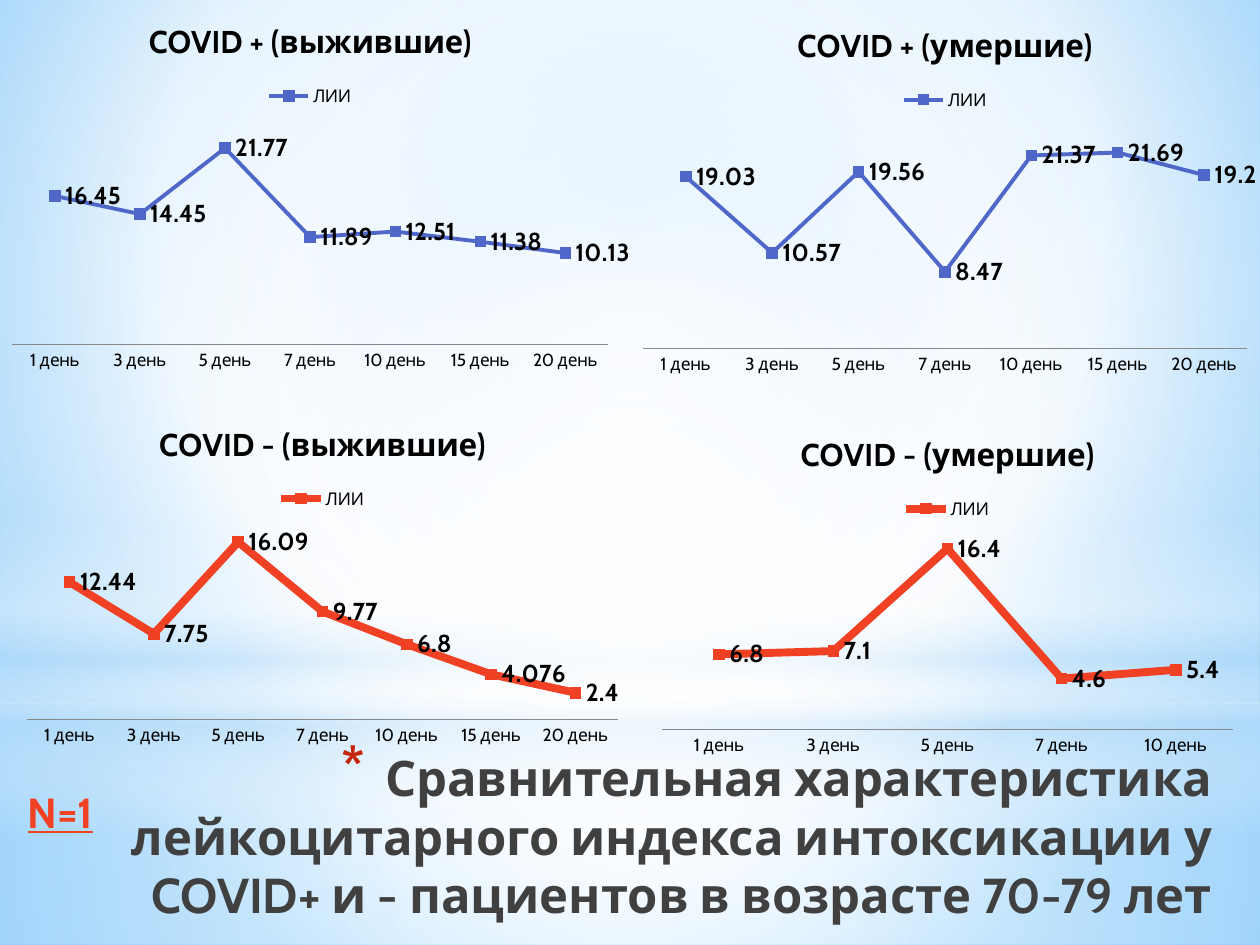
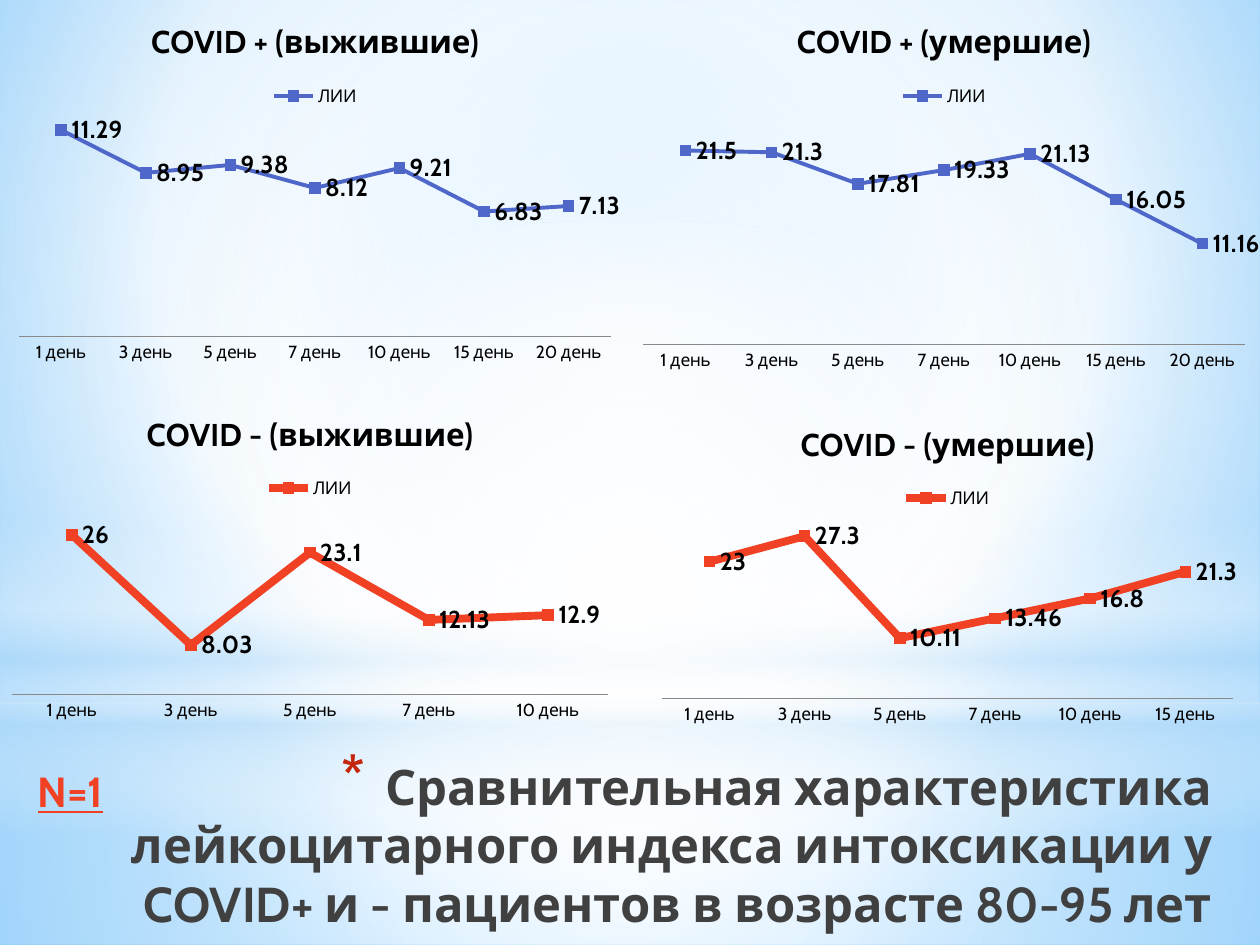
from dataclasses import dataclass

from pptx import Presentation
from pptx.chart.data import CategoryChartData
from pptx.dml.color import RGBColor
from pptx.enum.chart import (XL_CHART_TYPE, XL_LABEL_POSITION, XL_LEGEND_POSITION,
                             XL_MARKER_STYLE, XL_TICK_MARK)
from pptx.enum.shapes import MSO_SHAPE
from pptx.enum.text import MSO_ANCHOR, MSO_AUTO_SIZE, PP_ALIGN
from pptx.oxml import parse_xml
from pptx.oxml.ns import nsdecls, qn
from pptx.util import Inches, Pt


@dataclass(frozen=True)
class Theme:
    font: str = "Cabin"
    title_color: str = "404040"
    bullet_color: str = "C3260C"
    covid_positive: str = "4E67C8"
    covid_negative: str = "F14124"
    chart_text: str = "000000"
    axis: str = "898989"
    white: str = "FFFFFF"
    pale_blue: str = "B4DCFA"
    sky_light: str = "9ED5FF"
    sky_deep: str = "5BB9FF"
    title_size: int = 28
    note_size: int = 24
    chart_title_size: int = 18
    label_size: int = 14
    chart_size: int = 10


THEME = Theme()
DAYS = ["1 день", "3 день", "5 день", "7 день", "10 день", "15 день", "20 день"]
CENTER = (50, 50, 50, 50)
TITLE = ("Сравнительная характеристика лейкоцитарного индекса интоксикации "
         "у COVID+ и - пациентов в возрасте {} лет")

# Each chart: sign, outcome, box, values, optional inner plot area.
SLIDES = [
    dict(age="70-79", title_box=(0.43, 5.88, 9.29, 1.34), note_box=(0.12, 6.19, 1.42, 0.5),
         charts=[
             ("-", "выжившие", (0.12, 3.2, 4.88, 2.77),
              [12.44, 7.75, 16.09, 9.77, 6.8, 4.076, 2.4], None),
             ("-", "умершие", (5.16, 3.28, 4.72, 2.77), [6.8, 7.1, 16.4, 4.6, 5.4], None),
             ("+", "выжившие", (0, 0, 5, 3),
              [16.45, 14.45, 21.77, 11.89, 12.51, 11.38, 10.13], None),
             ("+", "умершие", (5, 0.03, 5, 3),
              [19.03, 10.57, 19.56, 8.47, 21.37, 21.69, 19.2], None),
         ]),
    dict(age="80-95", title_box=(0.35, 5.95, 9.37, 1.26), note_box=(0.2, 6.03, 1.57, 0.5),
         charts=[
             ("+", "выжившие", (0, 0, 5, 3),
              [11.29, 8.95, 9.38, 8.12, 9.21, 6.83, 7.13], (0.03, 0.31, 0.94, 0.58)),
             ("+", "умершие", (5, 0, 5, 3),
              [21.5, 21.3, 17.81, 19.33, 21.13, 16.05, 11.16], None),
             ("-", "выжившие", (0, 3.12, 4.92, 2.65), [26, 8.03, 23.1, 12.13, 12.9], None),
             ("-", "умершие", (5.16, 3.2, 4.72, 2.6),
              [23, 27.3, 10.11, 13.46, 16.8, 21.3], None),
         ]),
]


def color(value):
    return RGBColor.from_string(value)


def inches(box):
    return [Inches(length) for length in box]


def set_gradient(fill, element, stops, focus=None, angle=90):
    """Fill with (position, colour, opacity) stops: circular to focus, else linear."""
    fill.solid()
    solid = next(element.iter(qn("a:solidFill")))
    stop_xml = "".join(
        f'<a:gs pos="{position * 1000}"><a:srgbClr val="{value}">'
        f'<a:alpha val="{opacity * 1000}"/></a:srgbClr></a:gs>'
        for position, value, opacity in stops)
    if focus:
        left, top, right, bottom = (percent * 1000 for percent in focus)
        direction = (f'<a:path path="circle"><a:fillToRect l="{left}" t="{top}" '
                     f'r="{right}" b="{bottom}"/></a:path>')
    else:
        direction = f'<a:lin ang="{angle * 60000}" scaled="0"/>'
    gradient = parse_xml(f'<a:gradFill {nsdecls("a")} rotWithShape="1">'
                         f'<a:gsLst>{stop_xml}</a:gsLst>{direction}</a:gradFill>')
    solid.getparent().replace(solid, gradient)


def add_master_glow(master, slide, position, preset, box, stops, focus=None):
    """Draw a borderless gradient shape and place it behind the master's placeholders."""
    shape = slide.shapes.add_shape(preset, *inches(box))
    shape.shadow.inherit = False
    set_gradient(shape.fill, shape.element, stops, focus)
    shape.line.fill.background()
    master.shapes.element.insert(2 + position, shape.element)


def style_master(master, slide):
    white, blue = THEME.white, THEME.pale_blue
    set_gradient(master.background.fill, master.element,
                 [(0, THEME.sky_light, 100), (60, white, 100), (100, THEME.sky_deep, 100)],
                 (20, 10, 20, 60))
    glows = [
        (MSO_SHAPE.RECTANGLE, (0, 5.58, 10, 1.92),
         [(0, white, 91), (37, white, 76), (100, blue, 79)], CENTER),
        (MSO_SHAPE.RECTANGLE, (0, 0, 10, 5.58),
         [(0, white, 89), (48, white, 62), (100, blue, 79)], CENTER),
        (MSO_SHAPE.RECTANGLE, (0, 4.12, 10, 2.5),
         [(0, white, 0), (29, white, 30), (45, blue, 40),
          (55, white, 26), (65, blue, 60), (100, white, 0)], None),
        (MSO_SHAPE.OVAL, (0, 1.75, 10, 5.58), [(0, white, 100), (56, white, 0)], CENTER),
    ]
    for position, glow in enumerate(glows):
        add_master_glow(master, slide, position, *glow)


def set_font(font, size, value, bold=False, underline=None):
    font.name = THEME.font
    font.size = Pt(size)
    font.bold = bold
    font.underline = underline
    font.color.rgb = color(value)


def write_text(text_frame, text, align=PP_ALIGN.LEFT, auto_size=MSO_AUTO_SIZE.NONE, **font_format):
    text_frame.word_wrap = True
    text_frame.auto_size = auto_size
    text_frame.vertical_anchor = MSO_ANCHOR.TOP
    paragraph = text_frame.paragraphs[0]
    paragraph.alignment = align
    run = paragraph.add_run()
    run.text = text
    set_font(run.font, **font_format)
    return paragraph


def add_star_bullet(paragraph):
    properties = paragraph._p.get_or_add_pPr()
    properties.set("marL", str(Inches(0.35)))
    properties.set("indent", str(Inches(-0.35)))
    for xml in (f'<a:buClr {nsdecls("a")}><a:srgbClr val="{THEME.bullet_color}"/></a:buClr>',
                f'<a:buSzPct {nsdecls("a")} val="128000"/>',
                f'<a:buChar {nsdecls("a")} char="*"/>'):
        properties.append(parse_xml(xml))


def set_title(slide, text, box):
    title = slide.shapes.title
    title.left, title.top, title.width, title.height = inches(box)
    paragraph = write_text(title.text_frame, text, align=PP_ALIGN.RIGHT,
                           size=THEME.title_size, value=THEME.title_color, bold=True)
    add_star_bullet(paragraph)


def add_note(slide, text, box):
    note = slide.shapes.add_textbox(*inches(box))
    write_text(note.text_frame, text, auto_size=MSO_AUTO_SIZE.SHAPE_TO_FIT_TEXT,
               size=THEME.note_size, value=THEME.covid_negative, bold=True, underline=True)


def set_plot_area(chart, area):
    """Fix the inner plot area, given as fractions of the chart."""
    plot_area = next(chart.element.iter(qn("c:plotArea")))
    for layout in plot_area.findall(qn("c:layout")):
        plot_area.remove(layout)
    sizes = "".join(f'<c:{name} val="{value}"/>' for name, value in zip("xywh", area))
    plot_area.insert(0, parse_xml(
        f'<c:layout {nsdecls("c")}><c:manualLayout><c:layoutTarget val="inner"/>'
        f'<c:xMode val="edge"/><c:yMode val="edge"/>{sizes}</c:manualLayout></c:layout>'))


def style_series(series, value, line_width):
    series.smooth = False
    series.format.line.color.rgb = color(value)
    series.format.line.width = Pt(line_width)
    marker = series.marker
    marker.style = XL_MARKER_STYLE.SQUARE
    marker.size = 6
    marker.format.fill.solid()
    marker.format.fill.fore_color.rgb = color(value)
    marker.format.line.color.rgb = color(value)
    labels = series.data_labels
    labels.show_value = True
    labels.position = XL_LABEL_POSITION.RIGHT
    set_font(labels.font, THEME.label_size, THEME.chart_text, bold=True)


def add_index_chart(slide, sign, outcome, box, values, plot_area):
    data = CategoryChartData()
    data.categories = DAYS[:len(values)]
    data.add_series("ЛИИ", values)
    chart = slide.shapes.add_chart(XL_CHART_TYPE.LINE_MARKERS, *inches(box), data).chart
    set_font(chart.font, THEME.chart_size, THEME.chart_text)

    title_run = chart.chart_title.text_frame.paragraphs[0].add_run()
    title_run.text = f"COVID {sign} ({outcome})"
    set_font(title_run.font, THEME.chart_title_size, THEME.chart_text, bold=True)
    chart.chart_title.include_in_layout = False

    chart.has_legend = True
    chart.legend.position = XL_LEGEND_POSITION.TOP
    chart.legend.include_in_layout = False

    chart.value_axis.visible = False
    chart.value_axis.has_major_gridlines = False
    chart.value_axis.minimum_scale = 0
    chart.category_axis.major_tick_mark = XL_TICK_MARK.NONE
    chart.category_axis.format.line.color.rgb = color(THEME.axis)

    plot = chart.plots[0]
    plot.vary_by_categories = False
    if sign == "+":
        style_series(plot.series[0], THEME.covid_positive, 2.25)
    else:
        style_series(plot.series[0], THEME.covid_negative, 4.5)
    if plot_area:
        set_plot_area(chart, plot_area)


def main():
    presentation = Presentation()
    presentation.slide_width = Inches(10)
    presentation.slide_height = Inches(7.5)
    title_only = presentation.slide_layouts[5]
    for number, content in enumerate(SLIDES):
        slide = presentation.slides.add_slide(title_only)
        if number == 0:
            style_master(presentation.slide_master, slide)
        set_title(slide, TITLE.format(content["age"]), content["title_box"])
        for chart in content["charts"]:
            add_index_chart(slide, *chart)
        add_note(slide, "N=1", content["note_box"])
    presentation.save("out.pptx")


if __name__ == "__main__":
    main()
